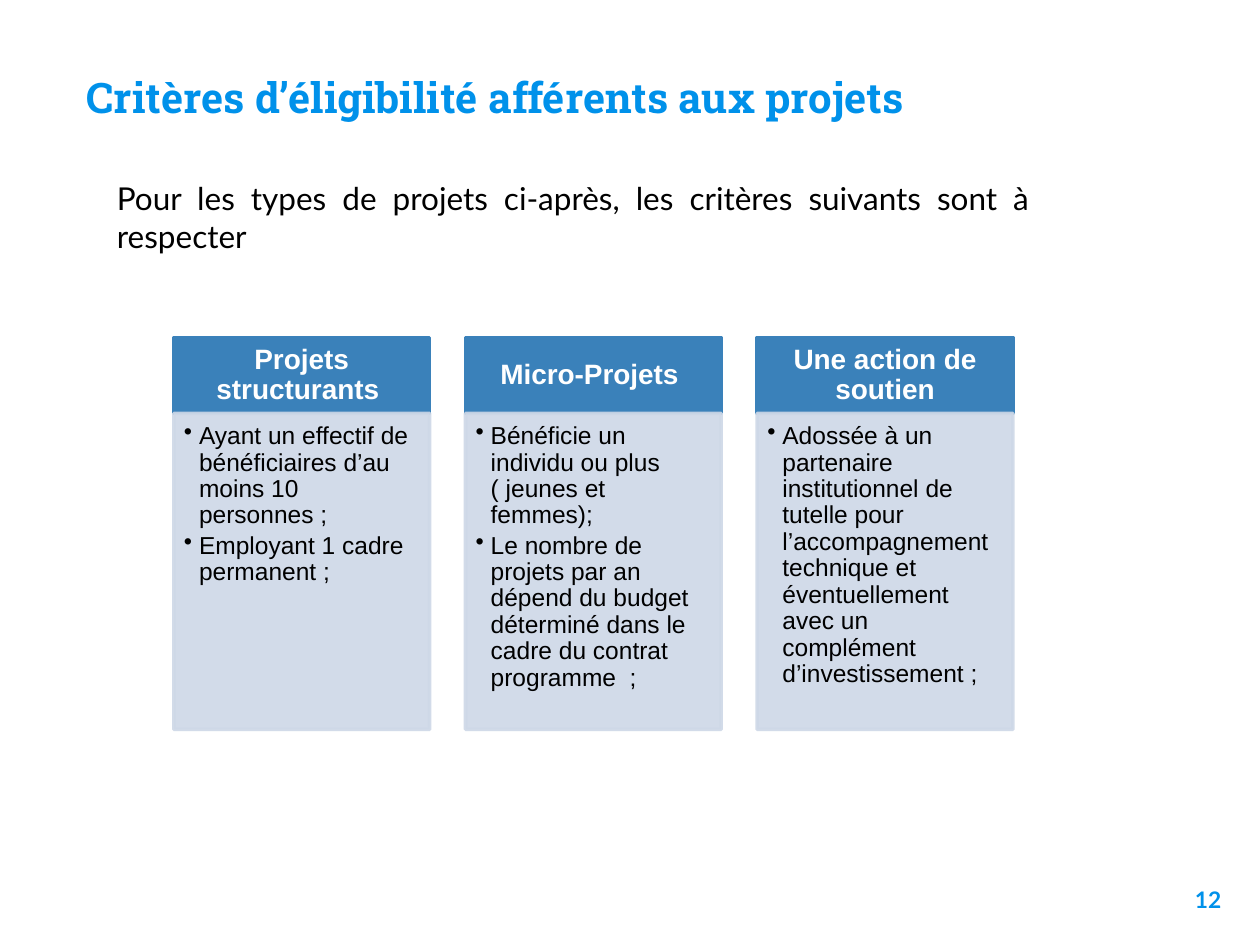
from lxml import etree
from pptx import Presentation
from pptx.dml.color import RGBColor
from pptx.enum.shapes import MSO_SHAPE
from pptx.enum.text import MSO_ANCHOR, PP_ALIGN
from pptx.oxml.ns import qn
from pptx.util import Inches, Pt

RECT = MSO_SHAPE.RECTANGLE
TOP, MIDDLE, BOTTOM = MSO_ANCHOR.TOP, MSO_ANCHOR.MIDDLE, MSO_ANCHOR.BOTTOM
LEFT, CENTER, RIGHT, JUSTIFY = (
    PP_ALIGN.LEFT, PP_ALIGN.CENTER, PP_ALIGN.RIGHT, PP_ALIGN.JUSTIFY)
AZURE = RGBColor(0x00, 0x91, 0xEA)
BLUE = RGBColor(0x3A, 0x81, 0xBA)
PALE = RGBColor(0xCE, 0xD8, 0xE7)
WHITE = RGBColor(0xFF, 0xFF, 0xFF)
BLACK = RGBColor(0x00, 0x00, 0x00)

COLUMNS = [
    ("Projets structurants ",
     ["Ayant un effectif de bénéficiaires d’au moins 10 personnes ;",
      "Employant 1 cadre permanent ;"]),
    ("Micro-Projets ",
     ["Bénéficie un individu ou plus ( jeunes et femmes);",
      "Le nombre de projets par an dépend du budget déterminé "
      "dans le cadre du contrat programme  ;"]),
    ("Une action de soutien",
     ["Adossée à un partenaire institutionnel de tutelle pour "
      "l’accompagnement technique et éventuellement avec un "
      "complément d’investissement ;"]),
]


def write(shape, lines, size, font="Arial", color=BLACK, bold=False,
          align=LEFT, anchor=TOP, pad=(0.1, 0.1, 0.1, 0.1),
          spacing=None, after=0, bullet=False):
    """Fill a shape with paragraphs; pad is left, top, right, bottom in inches."""
    frame = shape.text_frame
    frame.word_wrap = True
    frame.vertical_anchor = anchor
    (frame.margin_left, frame.margin_top,
     frame.margin_right, frame.margin_bottom) = map(Inches, pad)
    for i, line in enumerate(lines):
        para = frame.paragraphs[0] if i == 0 else frame.add_paragraph()
        para.alignment = align
        para.line_spacing = spacing
        para.space_after = Pt(after)
        if bullet:
            props = para._p.get_or_add_pPr()
            props.set("marL", str(Inches(0.12)))
            props.set("indent", str(-Inches(0.12)))
            etree.SubElement(props, qn("a:buChar")).set("char", "•")
        run = para.add_run()
        run.text = line
        run.font.name = font
        run.font.size = Pt(size)
        run.font.bold = bold
        run.font.color.rgb = color


def panel(left, top, width, height, color, alpha=100):
    """Add a rectangle whose fill and line share a colour and an opacity."""
    shape = slide.shapes.add_shape(
        RECT, Inches(left), Inches(top), Inches(width), Inches(height))
    shape.shadow.inherit = False
    shape.fill.solid()
    shape.fill.fore_color.rgb = color
    shape.line.color.rgb = color
    shape.line.width = Pt(2)
    if alpha < 100:
        for tint in shape.element.spPr.iter(qn("a:srgbClr")):
            etree.SubElement(tint, qn("a:alpha")).set("val", str(alpha * 1000))
    return shape


deck = Presentation()
deck.slide_width, deck.slide_height = Inches(10), Inches(7.5)
slide = deck.slides.add_slide(deck.slide_layouts[6])

page = slide.shapes.add_textbox(
    Inches(9.19), Inches(6.93), Inches(0.6), Inches(0.57))
write(page, ["12"], 13, font="Lato", color=AZURE, bold=True, align=RIGHT)

title = slide.shapes.add_textbox(
    Inches(0.59), Inches(0.58), Inches(8.6), Inches(0.49))
write(title, ["Critères d’éligibilité afférents aux projets"], 24,
      font="Roboto Slab", color=AZURE, bold=True, anchor=BOTTOM)

intro = slide.shapes.add_textbox(
    Inches(0.83), Inches(1.37), Inches(7.44), Inches(1.32))
write(intro, ["Pour les types de projets ci-après, les critères suivants "
              "sont à respecter"], 18, font="Lato", align=JUSTIFY,
      pad=(0.1, 0.05, 0.1, 0.05))

for i, (name, rules) in enumerate(COLUMNS):
    left = 1.38 + i * 2.315
    head = panel(left, 2.68, 2.03, 0.6, BLUE)
    write(head, [name], 16, color=WHITE, bold=True, align=CENTER,
          anchor=MIDDLE, pad=(0.12, 0.07, 0.12, 0.07), spacing=0.9)
    body = panel(left, 3.28, 2.03, 2.51, PALE, alpha=90)
    write(body, rules, 14, pad=(0.08, 0.08, 0.11, 0.12),
          spacing=0.9, after=2, bullet=True)

deck.save("out.pptx")
